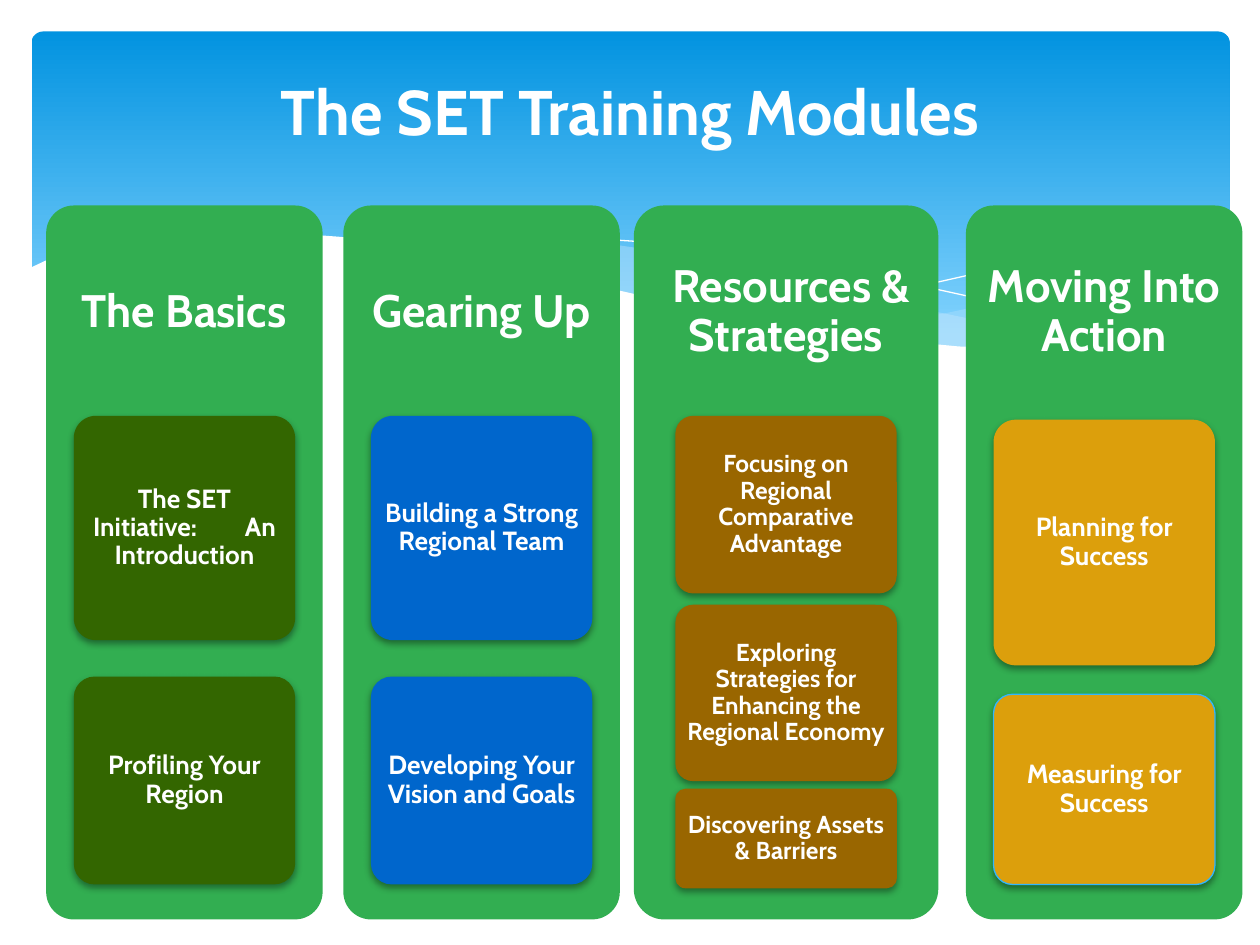
from lxml.etree import SubElement
from pptx import Presentation
from pptx.dml.color import RGBColor
from pptx.enum.shapes import MSO_SHAPE as Shape
from pptx.enum.text import MSO_ANCHOR as Anchor, PP_ALIGN as Align
from pptx.oxml.ns import qn
from pptx.util import Pt

COLORS = {
    "sky_top": "0293E0", "sky_bottom": "83D3FE", "mist": "C6E7FC",
    "white": "FFFFFF", "column": "32AE51", "green": "336600", "blue": "0066CC",
    "brown": "996600", "gold": "DC9F0C", "outline": "31B6FD", "shadow": "000000",
}
FONT = "Cabin"
CARD_WIDTH = 126.5
HEADER_HEIGHT = 122.4
GAP = "\t"  # marks a wide gap inside a line

BACK_MIST = [
    (702, 144), (673.2, 149), (641.5, 155.5), (619.9, 160.6), (579.6, 170.6),
    (542.2, 178.6), (508.3, 185), (475.9, 190.8), (507.6, 195.1), (536.4, 198),
    (562.3, 199.4), (586.1, 200.2), (614.9, 198.7), (640.1, 195.8),
    (663.1, 190.8), (683.3, 185), (702.7, 177.8), (702.7, 144),
]
FRONT_MIST = [
    (643, 196.6), (602.6, 190.8), (558, 182.9), (508.3, 172.8), (452.9, 159.8),
    (409.7, 149.8), (370.1, 142.6), (334.8, 137.5), (302.4, 134.6),
    (273.6, 133.2), (247.7, 133.9), (225.4, 135.4), (205.9, 137.5),
    (246.2, 143.3), (290.9, 151.9), (323.3, 159.8), (381.6, 172.8),
    (432.7, 183.6), (478.8, 191.5), (519.8, 197.3), (556.6, 199.4),
    (589, 200.2), (617, 199.4),
]
FALLING_LINE = [
    (222.5, 140.4), (241.2, 136.8), (261.4, 136.1), (288.7, 134.6),
    (324, 135.4), (367.2, 138.2), (400.3, 141.8), (437.8, 146.9),
    (478.8, 153.4), (523.4, 162.7), (572.4, 173.5), (625.7, 187.9), (653, 195.8),
]
RISING_LINE = [
    (441.4, 185), (470.2, 177.1), (500.4, 169.2), (538.6, 160.6),
    (580.3, 151.2), (623.5, 143.3), (655.2, 138.2), (684.7, 134.6), (702, 133.2),
]
WHITE_WAVE = [
    (703.4, 177.1), (676.8, 186.5), (655.2, 192.2), (630, 196.6),
    (602.6, 198.7), (582.5, 199.4), (547.9, 198), (509.8, 194.4),
    (466.6, 188.6), (416.9, 180), (380.9, 172.1), (342, 163.4), (301, 153.4),
    (262.8, 145.4), (227.5, 139.7), (195.1, 135.4), (165.6, 133.2),
    (139, 132.5), (115.9, 132.5), (95, 133.9), (76.3, 136.1), (61.2, 139),
    (48.2, 141.8), (37.4, 144.7), (25.9, 149), (16.6, 153.4),
    (16.6, 236.9), (703.4, 236.9),
]

# Column: left, width, heading, card colour, card text size, cards.
# Card: top within the column, height, text, outline colour.
COLUMNS = [
    (26.4, 158, "The Basics", "green", 15, [
        (120.2, 128.2, f"The SET Initiative:{GAP}An Introduction", None),
        (269.2, 118.8, "Profiling Your Region", None)]),
    (196.2, 158, "Gearing Up", "blue", 15, [
        (120.2, 128.2, "Building a Strong Regional Team", None),
        (269.2, 118.8, "Developing Your Vision and Goals", None)]),
    (362.2, 174, " Resources & Strategies", "brown", 14, [
        (120.2, 101.5, "Focusing on Regional Comparative Advantage", None),
        (228.2, 100.8, "Exploring Strategies for Enhancing the Regional Economy", None),
        (333.3, 56.9, "Discovering Assets & Barriers", None)]),
    (552, 158, "Moving Into Action", "gold", 15, [
        (122.4, 140.4, "Planning for Success", None),
        (279.3, 108.7, "Measuring for Success", "outline")]),
]


def rgb(name):
    return RGBColor.from_string(COLORS[name])


def paint(shape, fill=None, line=None, line_width=0.75, alpha=None):
    shape.shadow.inherit = False
    if fill:
        shape.fill.solid()
        shape.fill.fore_color.rgb = rgb(fill)
        if alpha:
            color = shape.fill._xPr.find(qn("a:solidFill"))[0]
            SubElement(color, qn("a:alpha"), val=str(alpha * 1000))
    else:
        shape.fill.background()
    if line:
        shape.line.color.rgb = rgb(line)
        shape.line.width = Pt(line_width)
    else:
        shape.line.fill.background()


def add_soft_shadow(shape):
    effects = shape._element.spPr.find(qn("a:effectLst"))
    shadow = SubElement(effects, qn("a:outerShdw"), blurRad=str(Pt(4)),
                        dist=str(Pt(2)), dir="5400000", rotWithShape="0")
    color = SubElement(shadow, qn("a:srgbClr"), val=COLORS["shadow"])
    SubElement(color, qn("a:alpha"), val="38000")


def write(shape, text, size, side_margin, end_margin, line_spacing=0.9):
    frame = shape.text_frame
    settings = {
        "word_wrap": True, "vertical_anchor": Anchor.MIDDLE,
        "margin_left": Pt(side_margin), "margin_right": Pt(side_margin),
        "margin_top": Pt(end_margin), "margin_bottom": Pt(end_margin),
    }
    for name, value in settings.items():
        setattr(frame, name, value)
    paragraph = frame.paragraphs[0]
    paragraph.alignment = Align.CENTER
    paragraph.line_spacing = line_spacing
    for part in text.replace(GAP, f"{GAP} {GAP}").split(GAP):
        run = paragraph.add_run()
        run.text = part
        for name, value in {"name": FONT, "size": Pt(size), "bold": True}.items():
            setattr(run.font, name, value)
        run.font.color.rgb = rgb("white")
        if part == " ":
            run._r.get_or_add_rPr().set("spc", "2400")


def add_rounded(slide, box, radius):
    shape = slide.shapes.add_shape(Shape.ROUNDED_RECTANGLE, *map(Pt, box))
    shape.adjustments[0] = radius
    return shape


def add_outline(slide, points, closed, **look):
    corners = [(Pt(x), Pt(y)) for x, y in points]
    builder = slide.shapes.build_freeform(*corners[0])
    builder.add_line_segments(corners[1:], close=closed)
    paint(builder.convert_to_shape(), **look)


def add_banner(slide, box):
    banner = add_rounded(slide, box, 0.034)
    paint(banner)
    banner.fill.gradient()
    banner.fill.gradient_angle = 270
    stops = zip(banner.fill.gradient_stops, ("sky_top", "sky_bottom"), (0, 0.9))
    for stop, color, position in stops:
        stop.color.rgb = rgb(color)
        stop.position = position
    add_outline(slide, BACK_MIST, True, fill="mist", alpha=29)
    add_outline(slide, FRONT_MIST, True, fill="mist", alpha=40)
    for points in (FALLING_LINE, RISING_LINE):
        add_outline(slide, points, False, line="white", line_width=0)
    add_outline(slide, WHITE_WAVE, True, fill="white")


def add_column(slide, box, heading, color, size, cards):
    left, top, width, height = box
    paint(add_rounded(slide, box, 0.1), fill="column")
    header = slide.shapes.add_textbox(*map(Pt, (left, top, width, HEADER_HEIGHT)))
    write(header, heading, 26, 8, 8)
    card_left = left + (width - CARD_WIDTH) / 2
    for card_top, card_height, text, line in cards:
        card = add_rounded(slide, (card_left, top + card_top, CARD_WIDTH, card_height), 0.1)
        paint(card, fill=color, line=line)
        add_soft_shadow(card)
        write(card, text, size, 2.9, 2.2)


def main():
    presentation = Presentation()
    presentation.slide_width, presentation.slide_height = Pt(720), Pt(540)
    slide = presentation.slides.add_slide(presentation.slide_layouts[6])
    add_banner(slide, (18, 18, 684.7, 194.4))
    for left, width, *content in COLUMNS:
        add_column(slide, (left, 117.4, width, 408), *content)
    title = slide.shapes.add_textbox(*map(Pt, (60, 12.2, 600, 102.2)))
    write(title, "The SET Training Modules", 36, 7.2, 3.6, line_spacing=1)
    presentation.save("out.pptx")


if __name__ == "__main__":
    main()
